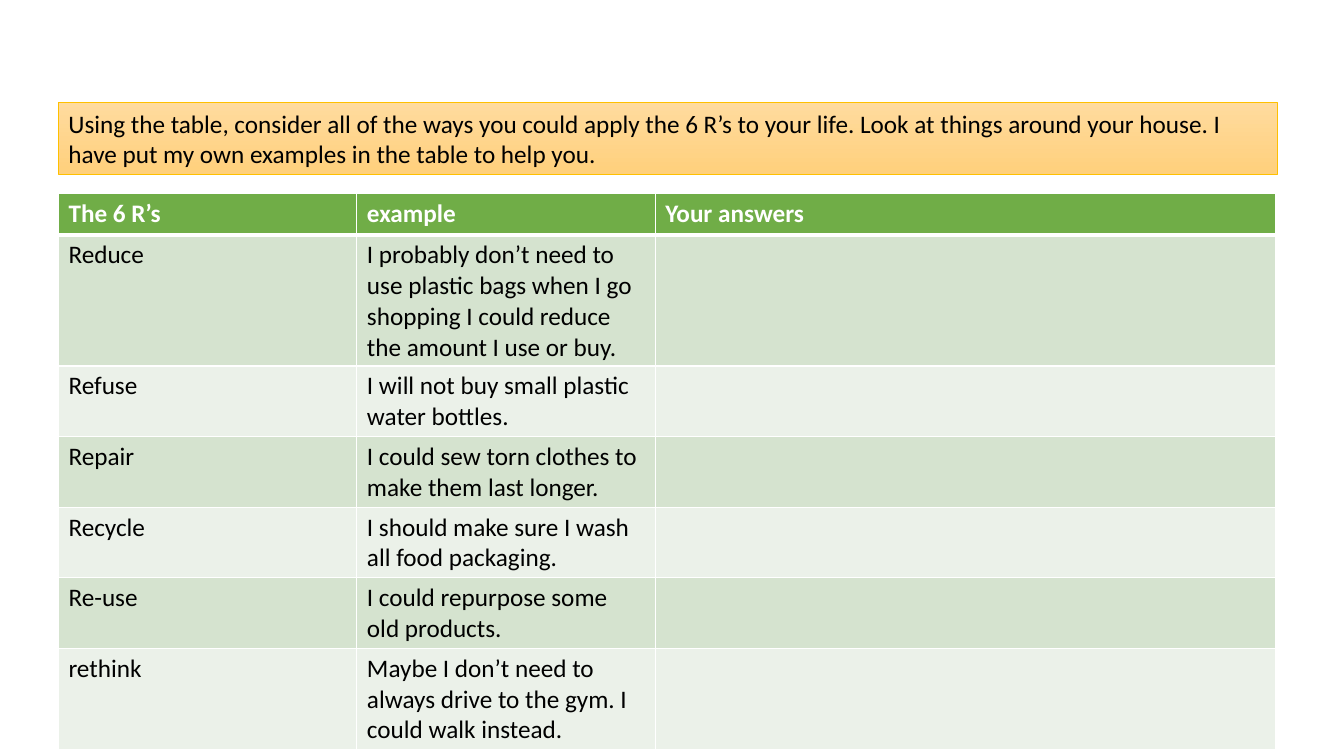
from lxml import etree
from pptx import Presentation
from pptx.dml.color import RGBColor
from pptx.enum.shapes import MSO_SHAPE
from pptx.enum.text import MSO_ANCHOR, MSO_AUTO_SIZE, PP_ALIGN
from pptx.oxml.ns import qn
from pptx.util import Inches, Pt

RECT = MSO_SHAPE.RECTANGLE
MIDDLE = MSO_ANCHOR.MIDDLE
GROW = MSO_AUTO_SIZE.SHAPE_TO_FIT_TEXT
LEFT = PP_ALIGN.LEFT

COLORS = {
    "text": "000000",
    "white": "FFFFFF",
    "head": "70AD47",
    "odd": "D5E3CF",
    "even": "EBF1E9",
    "top": "FFDB9E",
    "base": "FFD07C",
    "edge": "FFC000",
}

TASK = (
    "Using the table, consider all of the ways you could apply the 6 R’s to "
    "your life. Look at things around your house. I have put my own examples "
    "in the table to help you."
)
ROWS = [
    ("The 6 R’s", "example", "Your answers"),
    ("Reduce", "I probably don’t need to use plastic bags when I go shopping "
               "I could reduce the amount I use or buy.", ""),
    ("Refuse", "I will not buy small plastic water bottles.", ""),
    ("Repair", "I could sew torn clothes to make them last longer.", ""),
    ("Recycle", "I should make sure I wash all food packaging.", ""),
    ("Re-use", "I could repurpose some old products.", ""),
    ("rethink", "Maybe I don’t need to always drive to the gym. "
                "I could walk instead.", ""),
]
WIDTHS = (2.96, 2.96, 6.15)
HEIGHT = 0.41


def color(name):
    return RGBColor.from_string(COLORS[name])


class Deck:
    """Holds the text style and the current slide."""

    def __init__(self, font, size):
        self.font, self.size = font, size
        self.show = Presentation()
        self.show.slide_width = Inches(13.33)
        self.show.slide_height = Inches(7.5)
        self.slide = self.show.slides.add_slide(self.show.slide_layouts[6])

    def label(self, frame, text, tint="text", bold=False):
        frame.text = text
        line = frame.paragraphs[0]
        line.alignment = LEFT
        line.font.name = self.font
        line.font.size = Pt(self.size)
        line.font.bold = bold
        line.font.color.rgb = color(tint)

    def banner(self, text, *box):
        shape = self.slide.shapes.add_shape(RECT, *map(Inches, box))
        shape.shadow.inherit = False
        shape.fill.gradient()
        shape.fill.gradient_angle = 270
        for stop, tint in zip(shape.fill.gradient_stops, ("top", "base")):
            stop.color.rgb = color(tint)
        shape.line.color.rgb = color("edge")
        shape.line.width = Pt(0.5)
        frame = shape.text_frame
        frame.word_wrap = True
        frame.auto_size = GROW
        frame.vertical_anchor = MIDDLE
        self.label(frame, text)

    def border(self, cell, side, width):
        props = cell._tc.get_or_add_tcPr()
        line = etree.SubElement(props, qn("a:ln" + side), w=str(Pt(width)))
        fill = etree.SubElement(line, qn("a:solidFill"))
        etree.SubElement(fill, qn("a:srgbClr"), val=COLORS["white"])

    def cell(self, cell, text, row):
        head = row == 0
        for side in "LRTB":
            thick = (head and side == "B") or (row == 1 and side == "T")
            self.border(cell, side, 3 if thick else 1)
        cell.fill.solid()
        band = "odd" if row % 2 else "even"
        cell.fill.fore_color.rgb = color("head" if head else band)
        self.label(cell.text_frame, text, "white" if head else "text", head)

    def table(self, rows, widths, height, left, top):
        box = (left, top, sum(widths), height * len(rows))
        table = self.slide.shapes.add_table(
            len(rows), len(widths), *map(Inches, box)).table
        for column, width in zip(table.columns, widths):
            column.width = Inches(width)
        for r, row in enumerate(rows):
            for c, text in enumerate(row):
                self.cell(table.cell(r, c), text, r)


def main():
    deck = Deck("Calibri", 18)
    deck.banner(TASK, 0.58, 1.02, 12.09, 0.71)
    deck.table(ROWS, WIDTHS, HEIGHT, 0.58, 1.92)
    deck.show.save("out.pptx")


if __name__ == "__main__":
    main()
